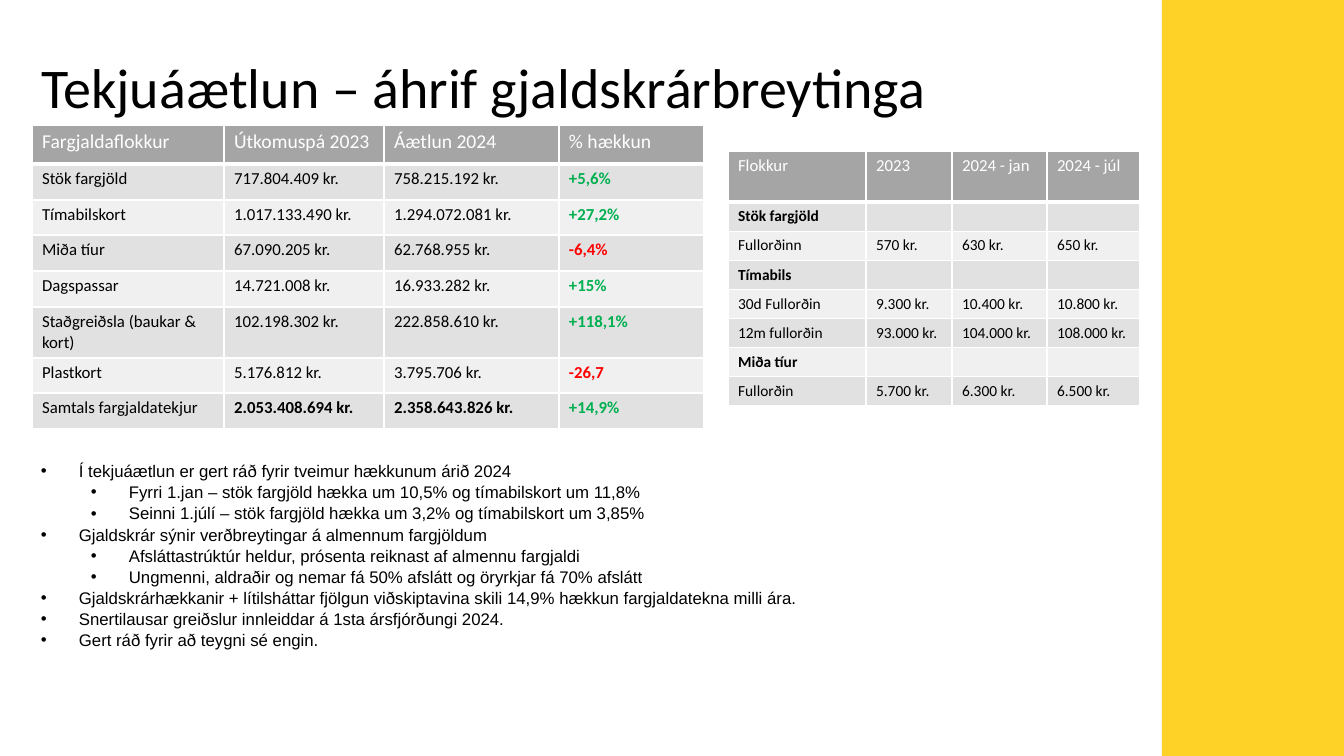
from pptx import Presentation
from pptx.dml.color import RGBColor
from pptx.enum.shapes import MSO_SHAPE
from pptx.enum.text import MSO_ANCHOR, PP_ALIGN
from pptx.oxml import parse_xml
from pptx.oxml.ns import nsdecls
from pptx.util import Emu, Pt


def px(n):
    return Emu(round(n * 914400 / 100.8))


def ink(code):
    return RGBColor.from_string(code)


deck = Presentation()
deck.slide_width, deck.slide_height = px(1344), px(756)
slide = deck.slides.add_slide(deck.slide_layouts[5])

band = slide.shapes.add_shape(MSO_SHAPE.RECTANGLE, px(1162), 0, px(182), px(756))
band.shadow.inherit = False
band.fill.solid()
band.fill.fore_color.rgb = ink("FFD228")
band.line.fill.background()

title = slide.shapes.title
title.left, title.top, title.width, title.height = px(31), px(34), px(1008), px(92)
title.text_frame.text = "Tekjuáætlun – áhrif gjaldskrárbreytinga"
title.text_frame.vertical_anchor = MSO_ANCHOR.BOTTOM
head = title.text_frame.paragraphs[0]
head.alignment = PP_ALIGN.LEFT
head.line_spacing = 0.9
head.font.name = "Calibri"
head.font.size = Pt(40)
head.font.color.rgb = ink("000000")

sales = [
    ("Fargjaldaflokkur", "Útkomuspá 2023", "Áætlun 2024", "% hækkun"),
    ("Stök fargjöld", "717.804.409 kr.", "758.215.192 kr.", "+5,6%"),
    ("Tímabilskort", "1.017.133.490 kr.", "1.294.072.081 kr.", "+27,2%"),
    ("Miða tíur", "67.090.205 kr.", "62.768.955 kr.", "-6,4%"),
    ("Dagspassar", "14.721.008 kr.", "16.933.282 kr.", "+15%"),
    ("Staðgreiðsla (baukar & kort)", "102.198.302 kr.", "222.858.610 kr.", "+118,1%"),
    ("Plastkort", "5.176.812 kr.", "3.795.706 kr.", "-26,7"),
    ("Samtals fargjaldatekjur", "2.053.408.694 kr.", "2.358.643.826 kr.", "+14,9%"),
]
fares = [
    ("Flokkur", "2023", "2024 - jan", "2024 - júl"),
    ("Stök fargjöld", "", "", ""),
    ("Fullorðinn", "570 kr.", "630 kr.", "650 kr."),
    ("Tímabils", "", "", ""),
    ("30d Fullorðin", "9.300 kr.", "10.400 kr.", "10.800 kr."),
    ("12m fullorðin", "93.000 kr.", "104.000 kr.", "108.000 kr."),
    ("Miða tíur", "", "", ""),
    ("Fullorðin", "5.700 kr.", "6.300 kr.", "6.500 kr."),
]
grids = [
    (sales, 32, 125, (192, 160, 175, 145), (39, 36, 35, 36, 36, 51, 35, 36), 14, 12),
    (fares, 728, 151, (138, 86, 95, 93), (51,) + (29,) * 7, 12, 11),
]
for data, left, top, cols, rows, big, small in grids:
    frame = slide.shapes.add_table(
        len(rows), len(cols), px(left), px(top), px(sum(cols)), px(sum(rows)))
    table = frame.table
    for col, width in zip(table.columns, cols):
        col.width = px(width)
    for r, (row, high) in enumerate(zip(data, rows)):
        table.rows[r].height = px(high)
        for c, text in enumerate(row):
            cell = table.cell(r, c)
            cell.text = text
            props = cell._tc.get_or_add_tcPr()
            for side in "LRTB":
                thick = Pt(3 if r == 0 and side == "B" else 1)
                props.append(parse_xml(
                    f'<a:ln{side} {nsdecls("a")} w="{thick}"><a:solidFill>'
                    f'<a:srgbClr val="FFFFFF"/></a:solidFill></a:ln{side}>'))
            cell.fill.solid()
            cell.fill.fore_color.rgb = ink("A5A5A5" if r == 0 else ("F0F0F0", "E1E1E1")[r % 2])
            rate = data is sales and c == 3
            total = data is sales and r == 7 and c > 0
            group = data is fares and row[1] == ""
            tint = "000000"
            if r == 0:
                tint = "FFFFFF"
            elif rate:
                tint = "FF0000" if text.startswith("-") else "00B050"
            font = cell.text_frame.paragraphs[0].font
            font.name = "Calibri"
            font.size = Pt(small if r else big)
            font.bold = r > 0 and (rate or total or group)
            font.color.rgb = ink(tint)

points = [
    (0, "Í tekjuáætlun er gert ráð fyrir tveimur hækkunum árið 2024"),
    (1, "Fyrri 1.jan – stök fargjöld hækka um 10,5% og tímabilskort um 11,8%"),
    (1, "Seinni 1.júlí – stök fargjöld hækka um 3,2% og tímabilskort um 3,85%"),
    (0, "Gjaldskrár sýnir verðbreytingar á almennum fargjöldum"),
    (1, "Afsláttastrúktúr heldur, prósenta reiknast af almennu fargjaldi"),
    (1, "Ungmenni, aldraðir og nemar fá 50% afslátt og öryrkjar fá 70% afslátt"),
    (0, "Gjaldskrárhækkanir + lítilsháttar fjölgun viðskiptavina skili 14,9% hækkun "
        "fargjaldatekna milli ára."),
    (0, "Snertilausar greiðslur innleiddar á 1sta ársfjórðungi 2024."),
    (0, "Gert ráð fyrir að teygni sé engin."),
]
notes = slide.shapes.add_textbox(px(31), px(455), px(846), px(182)).text_frame
notes.word_wrap = True
for n, (level, text) in enumerate(points):
    para = notes.add_paragraph() if n else notes.paragraphs[0]
    para.text = text
    para.level = level
    para.line_spacing = 1.05
    props = para._p.get_or_add_pPr()
    props.set("marL", str(px(38 + 50 * level)))
    props.set("indent", str(-px(38)))
    props.append(parse_xml(f'<a:buFont {nsdecls("a")} typeface="Arial"/>'))
    props.append(parse_xml(f'<a:buChar {nsdecls("a")} char="•"/>'))
    para.font.name = "Arial"
    para.font.size = Pt(12)
    para.font.color.rgb = ink("000000")

deck.save("out.pptx")
